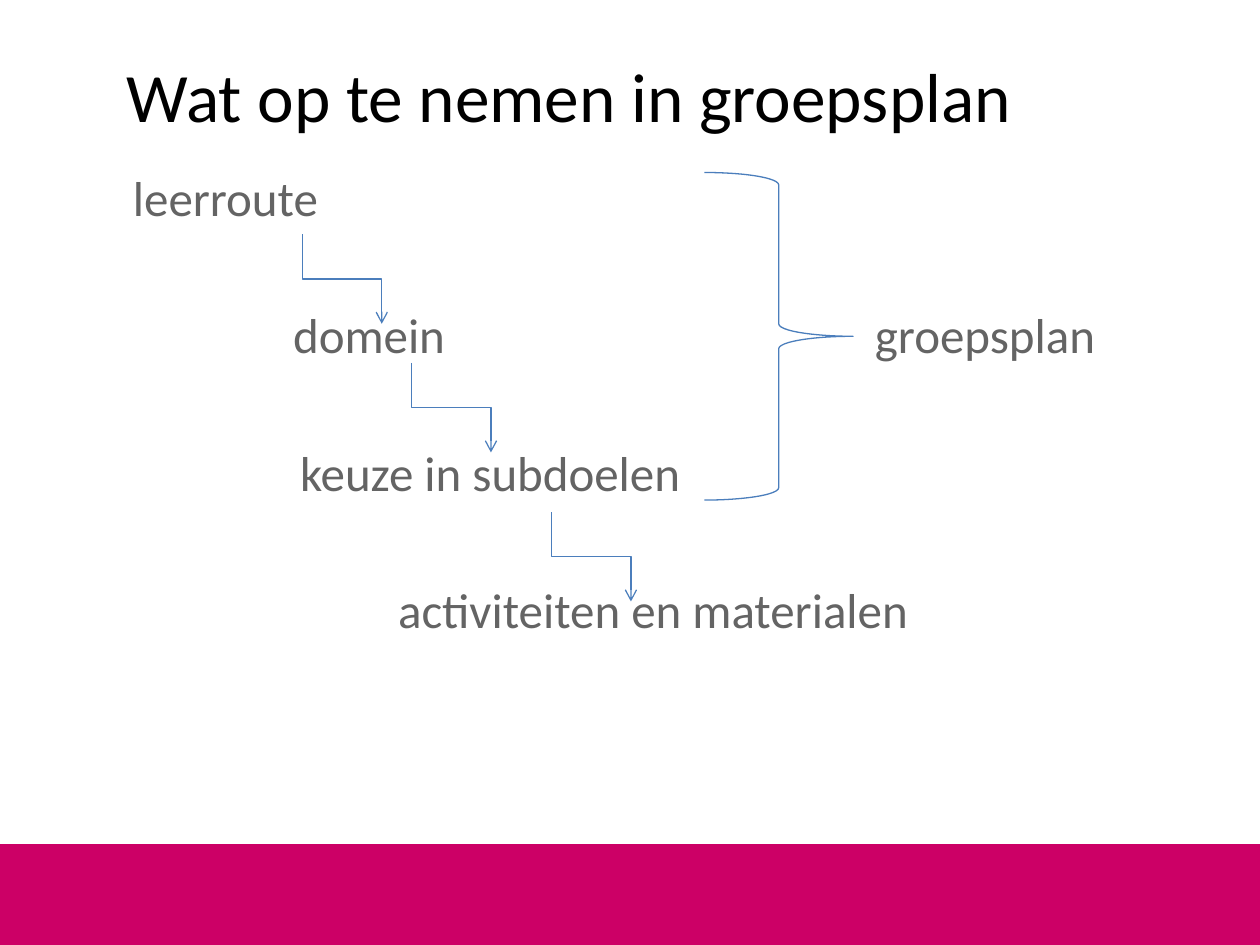
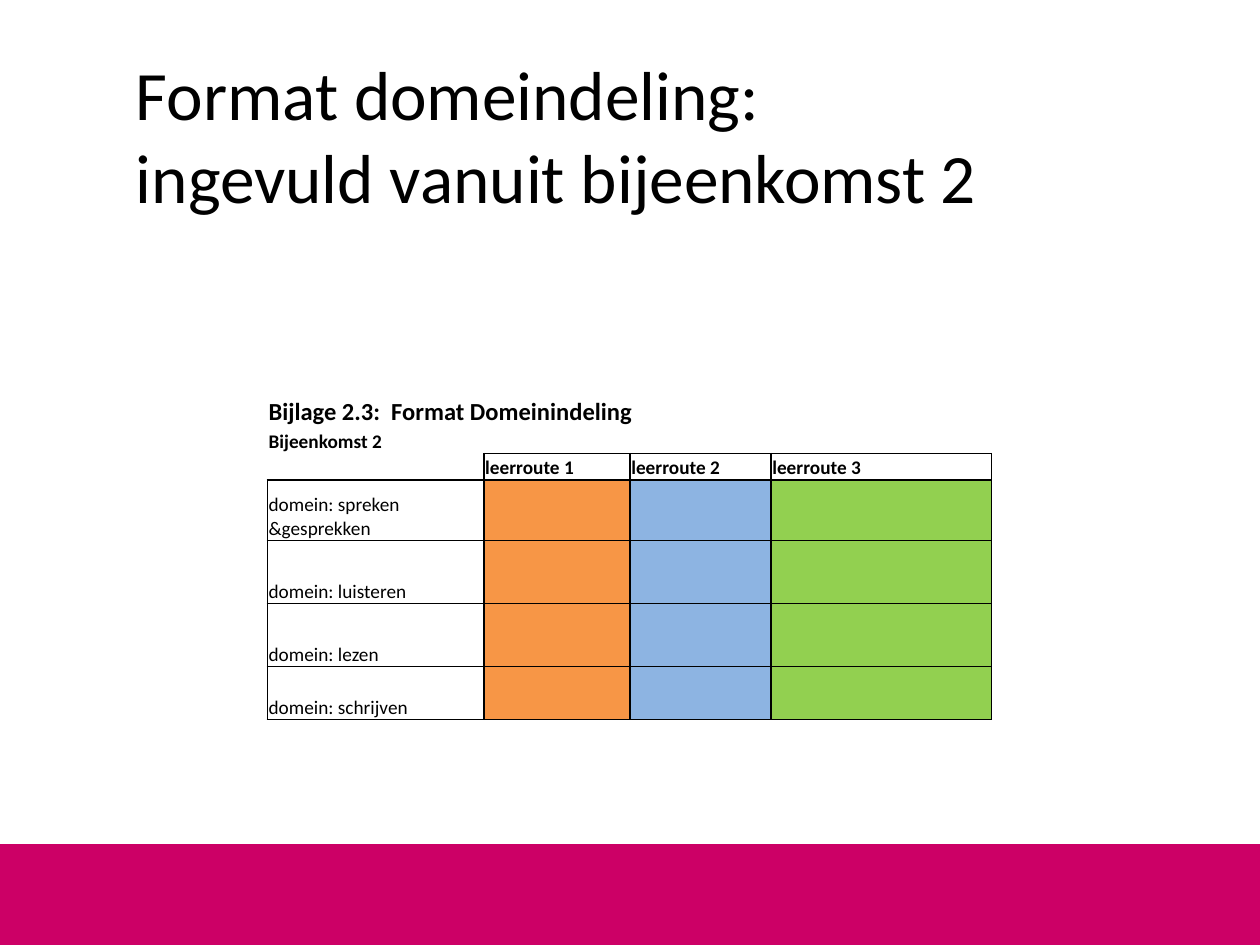
from lxml import etree
from pptx import Presentation
from pptx.dml.color import RGBColor
from pptx.enum.shapes import MSO_CONNECTOR, MSO_SHAPE
from pptx.enum.text import MSO_ANCHOR
from pptx.oxml.ns import qn
from pptx.util import Pt

RECT, BRACE = MSO_SHAPE.RECTANGLE, MSO_SHAPE.RIGHT_BRACE
ELBOW = MSO_CONNECTOR.ELBOW
TOP, MIDDLE, BOTTOM = MSO_ANCHOR.TOP, MSO_ANCHOR.MIDDLE, MSO_ANCHOR.BOTTOM

# Shared look
FONT = "Calibri"
BLACK = RGBColor(0x00, 0x00, 0x00)
GREY = RGBColor(0x64, 0x64, 0x64)
BLUE = RGBColor(0x4B, 0x7E, 0xBC)
PINK = RGBColor(0xCC, 0x00, 0x66)
ROUTE_FILLS = [RGBColor(0xF7, 0x96, 0x46), RGBColor(0x8D, 0xB4, 0xE2),
               RGBColor(0x92, 0xD0, 0x50)]
SLIDE_W, SLIDE_H = 720, 540
BAND_H = 57.6

# Steps of the plan: text, left
STEPS = [("leerroute", 76), ("domein", 167.5),
         ("keuze in subdoelen", 171.5), ("activiteiten en materialen", 227.5)]
STEP_TOP, STEP_PITCH = 95.8, 78.4
ARROW_STARTS = [(172.8, 133.9), (235.2, 207.4), (315.2, 292.6)]
ARROW_W, ARROW_H = 45.4, 51.1

# Domain table
COL_WIDTHS = [123.8, 83.5, 80.6, 126]
ROW_HEIGHTS = [18.7, 15.1, 15.1, 34.6, 36, 36, 30.2]
HEADER_ROW = 2
ROUTES = ["leerroute 1", "leerroute 2", "leerroute 3"]
DOMAINS = ["domein: spreken &gesprekken", "domein: luisteren",
           "domein: lezen", "domein: schrijven"]


def add_run(p, text, size, color, bold=False):
    r = p.add_run()
    r.text = text
    r.font.name, r.font.size, r.font.bold = FONT, Pt(size), bold
    r.font.color.rgb = color


def add_text(slide, lines, left, top, width, height, size, color,
             inset=0, anchor=TOP):
    sp = slide.shapes.add_textbox(Pt(left), Pt(top), Pt(width), Pt(height))
    tf = sp.text_frame
    tf.word_wrap = True
    tf.vertical_anchor = anchor
    tf.margin_left = tf.margin_right = Pt(inset)
    tf.margin_top = tf.margin_bottom = Pt(inset / 2)
    p = tf.paragraphs[0]
    for i, line in enumerate(lines):
        if i:
            p.add_line_break()
        add_run(p, line, size, color)


def add_label(slide, text, left, top):
    add_text(slide, [text], left, top, 310 if left < 400 else 160, 34.2,
             28, GREY)


def add_base(prs, title_lines, left, top):
    """New slide with the bottom band and a title."""
    slide = prs.slides.add_slide(prs.slide_layouts[6])
    band = slide.shapes.add_shape(RECT, 0, Pt(SLIDE_H - BAND_H),
                                  Pt(SLIDE_W), Pt(BAND_H))
    band.shadow.inherit = False
    band.fill.solid()
    band.fill.fore_color.rgb = PINK
    band.line.fill.background()
    add_text(slide, title_lines, left, top, 576, 90, 39.6, BLACK,
             inset=7.2, anchor=MIDDLE)
    return slide


def add_step_arrow(slide, x, y):
    """Elbow going down, right and down: a mirrored elbow turned by 270°."""
    cx, cy = x + ARROW_W / 2, y + ARROW_H / 2
    half_w, half_h = ARROW_H / 2, ARROW_W / 2
    line = slide.shapes.add_connector(ELBOW, Pt(cx + half_w), Pt(cy - half_h),
                                      Pt(cx - half_w), Pt(cy + half_h))
    line.line.color.rgb = BLUE
    line.line.width = Pt(0.75)
    sp_pr = line._element.spPr
    sp_pr.find(qn("a:xfrm")).set("rot", str(270 * 60000))
    etree.SubElement(sp_pr.find(qn("a:ln")), qn("a:tailEnd"), type="arrow")
    etree.SubElement(sp_pr, qn("a:effectLst"))


def add_brace(slide, left, top, width, height):
    sp = slide.shapes.add_shape(BRACE, Pt(left), Pt(top), Pt(width), Pt(height))
    sp.shadow.inherit = False
    sp.fill.background()
    sp.line.color.rgb = BLUE
    sp.line.width = Pt(0.75)


def in_grid(row, col):
    return row > HEADER_ROW or (row == HEADER_ROW and col > 0)


def set_borders(cell, row, col):
    """Draw each side that touches a cell of the grid."""
    tc_pr = cell._tc.get_or_add_tcPr()
    sides = {"lnL": (row, col - 1), "lnR": (row, col + 1),
             "lnT": (row - 1, col), "lnB": (row + 1, col)}
    for tag, neighbour in sides.items():
        ln = etree.SubElement(tc_pr, qn("a:" + tag), w=str(Pt(1)))
        if in_grid(row, col) or in_grid(*neighbour):
            fill = etree.SubElement(ln, qn("a:solidFill"))
            etree.SubElement(fill, qn("a:srgbClr"), val=str(BLACK))
        else:
            etree.SubElement(ln, qn("a:noFill"))


def format_cell(cell, row, col):
    cell.margin_left = cell.margin_right = cell.margin_top = Pt(0.7)
    cell.margin_bottom = 0
    cell.vertical_anchor = BOTTOM
    set_borders(cell, row, col)
    if row > HEADER_ROW and col > 0:
        cell.fill.solid()
        cell.fill.fore_color.rgb = ROUTE_FILLS[col - 1]
    else:
        cell.fill.background()


def add_domain_table(slide, left, top):
    table = slide.shapes.add_table(
        len(ROW_HEIGHTS), len(COL_WIDTHS), Pt(left), Pt(top),
        Pt(sum(COL_WIDTHS)), Pt(sum(ROW_HEIGHTS))).table
    table.first_row = table.horz_banding = False
    for column, width in zip(table.columns, COL_WIDTHS):
        column.width = Pt(width)
    for row, height in zip(table.rows, ROW_HEIGHTS):
        row.height = Pt(height)

    texts = {(0, 0): "Bijlage 2.3:  Format Domeinindeling",
             (1, 0): "Bijeenkomst 2"}
    texts.update({(HEADER_ROW, i): t for i, t in enumerate(ROUTES, 1)})
    texts.update({(i, 0): t for i, t in enumerate(DOMAINS, HEADER_ROW + 1)})
    for r in range(len(ROW_HEIGHTS)):
        for c in range(len(COL_WIDTHS)):
            cell = table.cell(r, c)
            format_cell(cell, r, c)
            p = cell.text_frame.paragraphs[0]
            if (r, c) in texts:
                add_run(p, texts[r, c], 11 if r else 14, BLACK,
                        bold=r <= HEADER_ROW)
            else:  # keeps empty cells from stretching their row
                etree.SubElement(p._p, qn("a:endParaRPr"), sz="1100")
    table.cell(0, 0).merge(table.cell(0, 2))


def build_plan_slide(prs):
    slide = add_base(prs, ["Wat op te nemen in groepsplan"], 65.5, 9.4)
    for i, (text, left) in enumerate(STEPS):
        add_label(slide, text, left, STEP_TOP + i * STEP_PITCH)
    add_label(slide, "groepsplan", 500, STEP_TOP + STEP_PITCH)
    for x, y in ARROW_STARTS:
        add_step_arrow(slide, x, y)
    add_brace(slide, 402.5, 98.6, 85, 187.2)


def build_domain_slide(prs):
    slide = add_base(prs, ["Format domeindeling: ",
                           "ingevuld vanuit bijeenkomst 2"], 70.6, 31.7)
    add_domain_table(slide, 152.8, 225.4)


def main():
    prs = Presentation()
    prs.slide_width, prs.slide_height = Pt(SLIDE_W), Pt(SLIDE_H)
    build_plan_slide(prs)
    build_domain_slide(prs)
    prs.save("out.pptx")


if __name__ == "__main__":
    main()
